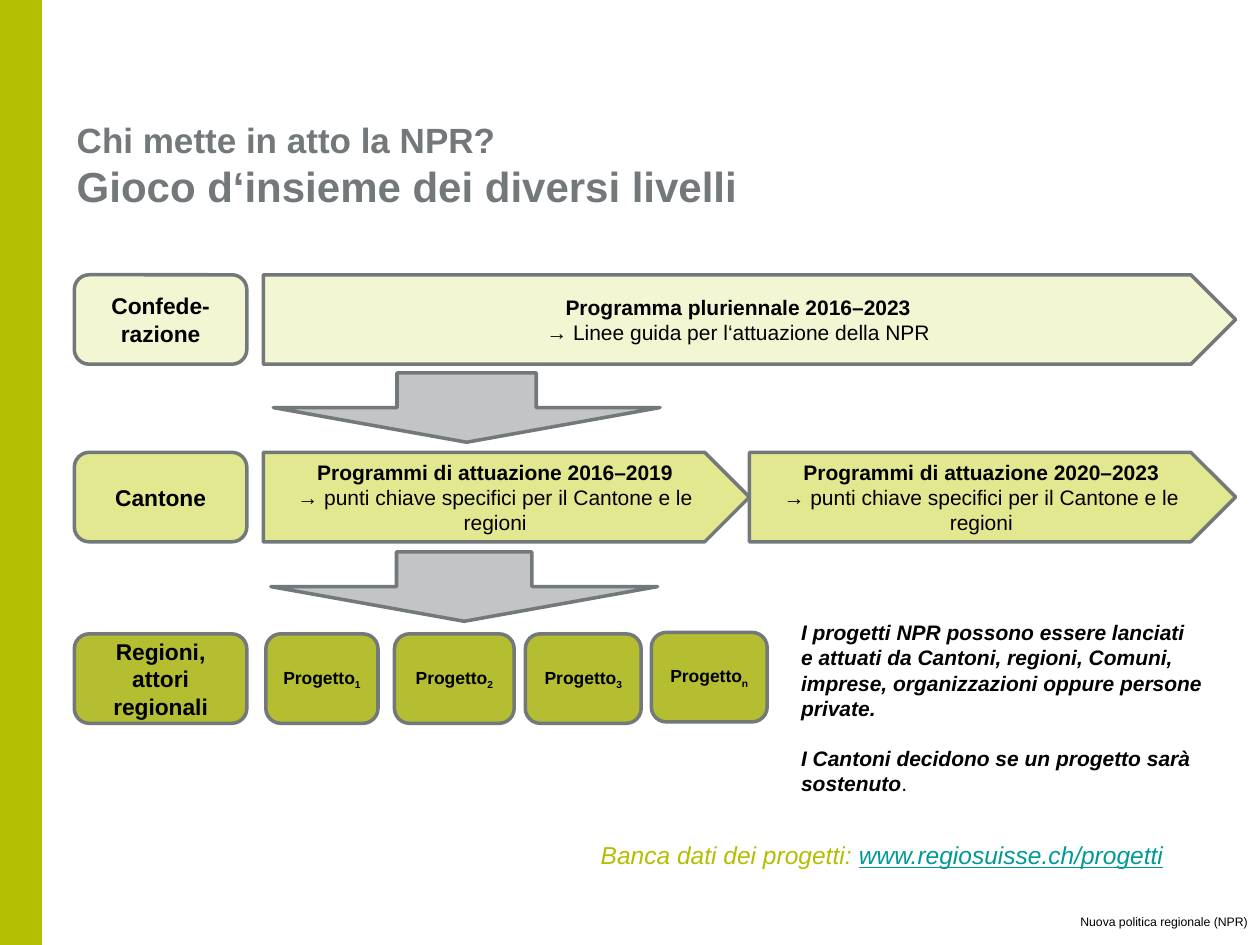
from lxml.etree import SubElement
from pptx import Presentation
from pptx.dml.color import RGBColor
from pptx.enum.shapes import MSO_SHAPE
from pptx.enum.text import MSO_ANCHOR, PP_ALIGN
from pptx.util import Pt

COLOURS = {
    "rail": "B4BE00",
    "grey": "73787B",
    "arrow": "C2C4C6",
    "federal": "F3F6D2",
    "canton": "E2E890",
    "region": "B4BE30",
    "link": "009999",
    "black": "000000",
}
ROW_HEIGHT = 51.1
FEDERAL_TOP, CANTON_TOP, REGION_TOP = 157, 258.5, 362.2
LEVEL_LEFT, LEVEL_WIDTH = 42.5, 98.6
PROGRAMME_LEFT, PROGRAMME_WIDTH = 150.5, 277.8


class SlideBuilder:
    """Holds the style and the current slide, and draws each kind of element."""

    def __init__(self, slide, font_name="Arial", line_width=2):
        self.slide = slide
        self.font_name = font_name
        self.line_width = line_width

    def style(self, font, size=None, colour=None, bold=None, italic=None, underline=None):
        if size:
            font.size = Pt(size)
        if colour:
            font.color.rgb = RGBColor.from_string(COLOURS[colour])
        if bold is not None:
            font.bold = bold
        if italic is not None:
            font.italic = italic
        if underline:
            font.underline = True

    def paragraph(self, frame, index, runs, align=PP_ALIGN.LEFT, before=0, **look):
        paragraph = frame.add_paragraph() if index else frame.paragraphs[0]
        paragraph.alignment = align
        if before:
            paragraph.space_before = Pt(before)
        paragraph.font.name = self.font_name
        self.style(paragraph.font, **{"colour": "black", **look})
        for text, changes in runs:
            for number, line in enumerate(text.split("\n")):
                if number:
                    paragraph.add_line_break()
                run = paragraph.add_run()
                run.text = line
                self.style(run.font, **changes)
        return paragraph

    def text(self, left, top, width, height, anchor=MSO_ANCHOR.TOP):
        box = self.slide.shapes.add_textbox(Pt(left), Pt(top), Pt(width), Pt(height))
        box.text_frame.word_wrap = True
        box.text_frame.vertical_anchor = anchor
        return box.text_frame

    def shape(self, kind, left, top, width, height, fill, outlined=True):
        shape = self.slide.shapes.add_shape(kind, Pt(left), Pt(top), Pt(width), Pt(height))
        shape.shadow.inherit = False
        shape.fill.solid()
        shape.fill.fore_color.rgb = RGBColor.from_string(COLOURS[fill])
        if outlined:
            shape.line.width = Pt(self.line_width)
            shape.line.color.rgb = RGBColor.from_string(COLOURS["grey"])
            line = shape.line.fill._xPr
            SubElement(line, line.tag.replace("}ln", "}round"))
        else:
            shape.line.fill.background()
        shape.text_frame.word_wrap = True
        shape.text_frame.vertical_anchor = MSO_ANCHOR.MIDDLE
        return shape

    def level(self, top, label, fill):
        shape = self.shape(MSO_SHAPE.ROUNDED_RECTANGLE, LEVEL_LEFT, top, LEVEL_WIDTH, ROW_HEIGHT, fill)
        self.paragraph(shape.text_frame, 0, [(label, {})], PP_ALIGN.CENTER, size=13, bold=True)

    def programme(self, left, top, width, fill, heading, detail):
        shape = self.shape(MSO_SHAPE.PENTAGON, left, top, width, ROW_HEIGHT, fill)
        for index, line in enumerate((heading, detail)):
            self.paragraph(shape.text_frame, index, [(line, {})], PP_ALIGN.CENTER, size=12, bold=index == 0)

    def down_arrow(self, left, top, shaft):
        shape = self.shape(MSO_SHAPE.DOWN_ARROW, left, top, 221, 39.6, "arrow")
        shape.adjustments[0] = shaft
        shape.adjustments[1] = 0.5

    def project(self, left, top, width, subscript):
        shape = self.shape(MSO_SHAPE.ROUNDED_RECTANGLE, left, top, width, ROW_HEIGHT, "region")
        shape.text_frame.word_wrap = False
        runs = [("Progetto", {}), (subscript, {})]
        paragraph = self.paragraph(shape.text_frame, 0, runs, PP_ALIGN.CENTER, size=10, bold=True)
        paragraph.runs[1]._r.get_or_add_rPr().set("baseline", "-25000")


def main():
    presentation = Presentation()
    presentation.slide_width, presentation.slide_height = Pt(720), Pt(540)
    slide = presentation.slides.add_slide(presentation.slide_layouts[6])
    builder = SlideBuilder(slide)

    builder.shape(MSO_SHAPE.RECTANGLE, 0, 0, 24, 540, "rail", outlined=False)
    title = builder.text(36.8, 65, 640.8, 58, MSO_ANCHOR.MIDDLE)
    title_lines = [("Chi mette in atto la NPR?", 20), ("Gioco d‘insieme dei diversi livelli", 24)]
    for index, (line, size) in enumerate(title_lines):
        builder.paragraph(title, index, [(line, {})], size=size, colour="grey", bold=True)

    for top, label, fill in (
        (FEDERAL_TOP, "Confede- razione", "federal"),
        (CANTON_TOP, "Cantone", "canton"),
        (REGION_TOP, "Regioni, attori regionali", "region"),
    ):
        builder.level(top, label, fill)

    builder.programme(PROGRAMME_LEFT, FEDERAL_TOP, 2 * PROGRAMME_WIDTH, "federal",
                      "Programma pluriennale 2016–2023", "→ Linee guida per l‘attuazione della NPR")
    for index, years in enumerate(("2016–2019", "2020–2023")):
        builder.programme(PROGRAMME_LEFT + index * PROGRAMME_WIDTH, CANTON_TOP, PROGRAMME_WIDTH, "canton",
                          f"Programmi di attuazione {years}",
                          "→ punti chiave specifici per il Cantone e le regioni")

    builder.down_arrow(156.2, 213.1, 0.36)
    builder.down_arrow(154.8, 315.4, 0.35)

    for left, top, width, subscript in (
        (151.9, REGION_TOP, 64.1, "1"),
        (225.4, REGION_TOP, 68.4, "2"),
        (300.2, REGION_TOP, 66.2, "3"),
        (372.2, 361.4, 66.2, "n"),
    ):
        builder.project(left, top, width, subscript)

    remarks = builder.text(450.7, 350.6, 254.9, 126)
    builder.paragraph(remarks, 0, [(
        "I progetti NPR possono essere lanciati\ne attuati da Cantoni, regioni, Comuni, "
        "imprese, organizzazioni oppure persone private.", {})], size=12, bold=True, italic=True)
    builder.paragraph(remarks, 1, [
        ("I Cantoni decidono se un progetto sarà sostenuto", {}),
        (".", {"bold": False, "italic": False}),
    ], before=14.4, size=12, bold=True, italic=True)

    database = builder.text(336.2, 476.6, 349.2, 24.5)
    builder.paragraph(database, 0, [
        ("Banca dati dei progetti: ", {"colour": "rail"}),
        ("www.regiosuisse.ch/progetti", {"colour": "link", "underline": True}),
    ], size=14, italic=True)

    footer = builder.text(586.8, 519.1, 133.2, 20.9)
    builder.paragraph(footer, 0, [("Nuova politica regionale (NPR)", {})], PP_ALIGN.RIGHT, size=7)

    presentation.save("out.pptx")


if __name__ == "__main__":
    main()
